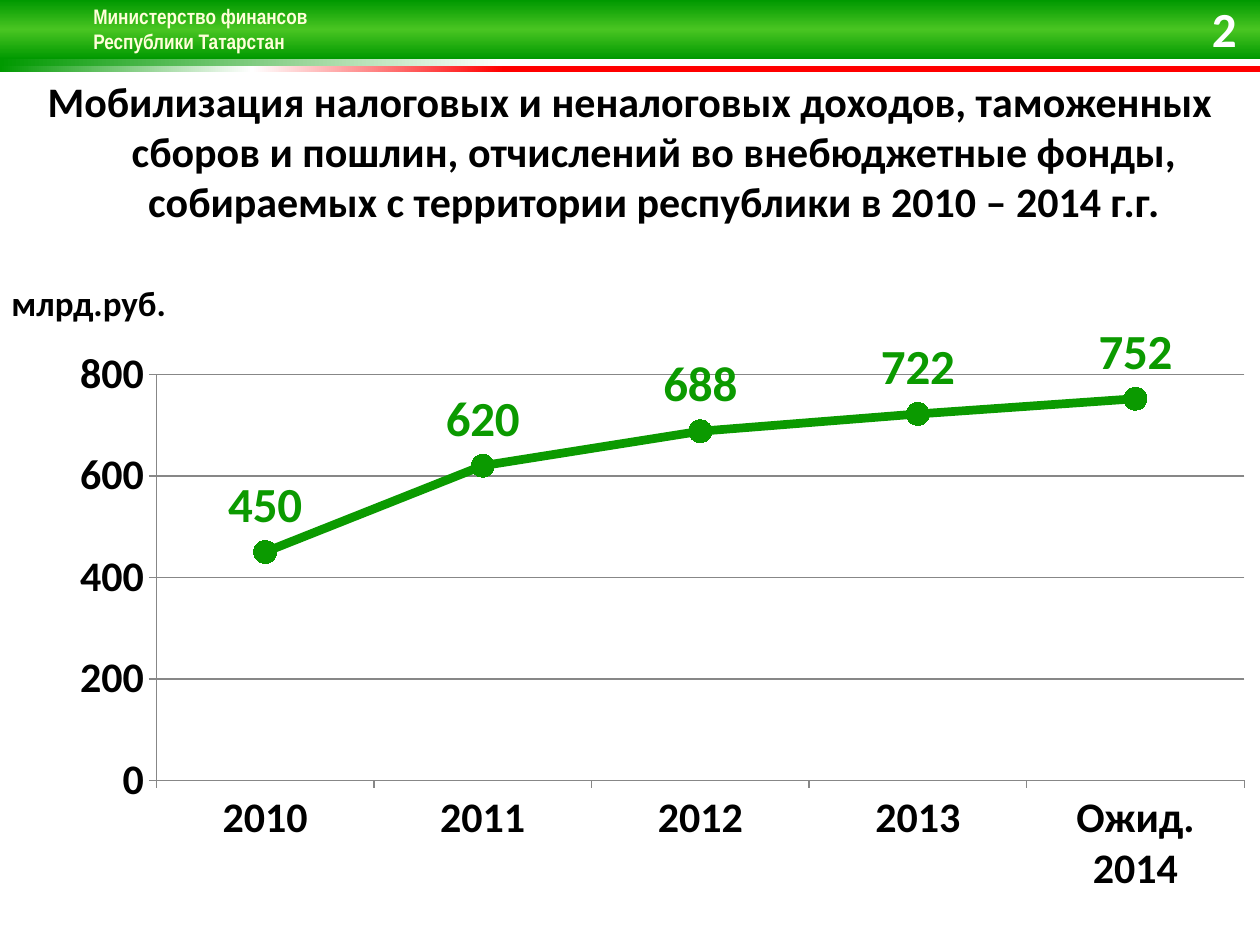
import lxml.etree
import pptx
import pptx.chart.data
import pptx.dml.color
import pptx.enum.chart
import pptx.enum.shapes
import pptx.enum.text
import pptx.oxml
import pptx.oxml.ns
import pptx.util

EMU_PER_PX = 914400 / 126
GREEN = "0B9A00"
GRAY = "878787"
BLACK = "000000"
ALIGN = pptx.enum.text.PP_ALIGN
NAMESPACES = pptx.oxml.ns.nsdecls("a", "c")


def px(length):
    """Turn whole pixels into EMU."""
    return pptx.util.Emu(round(length * EMU_PER_PX))


def color(value):
    """Turn a hex string into a colour."""
    return pptx.dml.color.RGBColor.from_string(value)


def set_font(font, size, value, name="Calibri", bold=True):
    """Set size, colour, typeface and weight."""
    font.size = pptx.util.Pt(size)
    font.bold = bold
    font.name = name
    font.fill.solid()
    font.fill.fore_color.rgb = color(value)


def add_band(page, top, height, stops, angle):
    """Add a full-width band with a linear gradient."""
    band = page.shapes.add_shape(
        pptx.enum.shapes.MSO_SHAPE.RECTANGLE, 0, px(top), px(1260), px(height))
    band.shadow.inherit = False
    band.line.fill.background()
    band.fill.gradient()
    gradient = band.fill._xPr.find(pptx.oxml.ns.qn("a:gradFill"))
    marks = "".join(
        f'<a:gs pos="{position * 1000}"><a:srgbClr val="{value}"/></a:gs>'
        for position, value in stops)
    gradient.getparent().replace(gradient, pptx.oxml.parse_xml(
        f'<a:gradFill {NAMESPACES} rotWithShape="1"><a:gsLst>{marks}</a:gsLst>'
        f'<a:lin ang="{angle * 60000}" scaled="0"/></a:gradFill>'))


def add_text(page, place, text, size, value, name="Calibri", align=ALIGN.LEFT,
             wrap=True, hanging=0, middle=False):
    """Add a text box with one paragraph and return the paragraph."""
    box = page.shapes.add_textbox(*map(px, place))
    frame = box.text_frame
    frame.word_wrap = wrap
    if middle:
        frame.vertical_anchor = pptx.enum.text.MSO_ANCHOR.MIDDLE
    para = frame.paragraphs[0]
    para.text = text
    para.alignment = align
    if hanging:
        properties = para._p.get_or_add_pPr()
        properties.set("marL", str(px(hanging)))
        properties.set("indent", str(-px(hanging)))
    set_font(para.font, size, value, name)
    return para


def add_text_shadow(para):
    """Give every run of a paragraph a soft dark shadow."""
    for span in para.runs:
        span._r.get_or_add_rPr().insert(0, pptx.oxml.parse_xml(
            f'<a:effectLst {NAMESPACES}><a:outerShdw blurRad="38100" dist="38100" '
            'dir="2700000"><a:srgbClr val="000000"/></a:outerShdw></a:effectLst>'))


def set_plot_area(chart, **fractions):
    """Fix the inner plot area as fractions of the chart."""
    plot_area = chart._chartSpace.chart.plotArea
    for layout in plot_area.findall(pptx.oxml.ns.qn("c:layout")):
        plot_area.remove(layout)
    sizes = "".join(f'<c:{key} val="{size}"/>' for key, size in fractions.items())
    plot_area.insert(0, pptx.oxml.parse_xml(
        f'<c:layout {NAMESPACES}><c:manualLayout><c:layoutTarget val="inner"/>'
        f'<c:xMode val="edge"/><c:yMode val="edge"/>{sizes}'
        '</c:manualLayout></c:layout>'))


def style_axis(axis):
    """Set the line, ticks and labels of an axis."""
    axis.major_tick_mark = pptx.enum.chart.XL_TICK_MARK.OUTSIDE
    axis.minor_tick_mark = pptx.enum.chart.XL_TICK_MARK.NONE
    axis.format.line.color.rgb = color(GRAY)
    axis.format.line.width = pptx.util.Pt(0.75)
    set_font(axis.tick_labels.font, 24, BLACK)


def style_series(series):
    """Set the line, markers and value labels of the series."""
    series.smooth = False
    series.format.line.color.rgb = color(GREEN)
    series.format.line.width = pptx.util.Pt(5)
    series.marker.style = pptx.enum.chart.XL_MARKER_STYLE.CIRCLE
    series.marker.size = 13
    series.marker.format.fill.solid()
    series.marker.format.fill.fore_color.rgb = color(GREEN)
    series.marker.format.line.color.rgb = color(GREEN)
    labels = series.data_labels
    labels.show_value = True
    labels.position = pptx.enum.chart.XL_LABEL_POSITION.ABOVE
    labels.number_format = "0"
    labels.number_format_is_linked = False
    set_font(labels.font, 28, GREEN)


def add_revenue_chart(page, place):
    """Add the line chart of revenue by year."""
    data = pptx.chart.data.CategoryChartData(number_format="0")
    data.categories = ["2010", "2011", "2012", "2013", "Ожид. 2014"]
    data.add_series("Series 1", [450, 620, 688, 722, 752])
    chart = page.shapes.add_chart(
        pptx.enum.chart.XL_CHART_TYPE.LINE_MARKERS, *map(px, place), data).chart
    chart.has_title = False
    chart.has_legend = False
    set_font(chart.font, 18, BLACK, bold=False)
    chart.plots[0].vary_by_categories = False
    set_plot_area(chart, x=0.115, y=0.12, w=0.885, h=0.655)
    style_axis(chart.category_axis)
    values = chart.value_axis
    style_axis(values)
    values.minimum_scale = 0
    values.maximum_scale = 800
    values.major_unit = 200
    values.has_major_gridlines = True
    values.major_gridlines.format.line.color.rgb = color(GRAY)
    values.major_gridlines.format.line.width = pptx.util.Pt(0.75)
    values.tick_labels.number_format = "0"
    values.tick_labels.number_format_is_linked = False
    style_series(chart.plots[0].series[0])


def main():
    """Build the slide and save it."""
    deck = pptx.Presentation()
    deck.slide_width, deck.slide_height = px(1260), px(945)
    page = deck.slides.add_slide(deck.slide_layouts[6])
    add_band(page, 59, 7, [(0, "FFFFFF"), (60, "FFFFFF"), (100, "009900")], 180)
    add_band(page, 66, 6, [(60, "FF0000"), (80, "FFFFFF"), (100, "009900")], 180)
    add_band(page, 0, 59, [(0, "009900"), (50, "49C522"), (100, "009900")], 90)
    ministry = add_text(
        page, (81, -3, 242, 89), "Министерство финансов\vРеспублики Татарстан",
        12, "FFFFD9", name="Arial Narrow")
    add_text_shadow(ministry)
    add_text(
        page, (0, 69, 1260, 136),
        "Мобилизация налоговых и неналоговых доходов, таможенных сборов и пошлин, "
        "отчислений во внебюджетные фонды, собираемых с территории республики "
        "в 2010 – 2014 г.г.",
        24, BLACK, align=ALIGN.CENTER, hanging=48)
    add_revenue_chart(page, (15, 300, 1230, 620))
    add_text(page, (1168, 6, 81, 43), "2", 28, "FFFFFF",
             align=ALIGN.RIGHT, hanging=48, middle=True)
    add_text(page, (-1, 275, 181, 55), "млрд.руб.", 20, BLACK, wrap=False)
    deck.save("out.pptx")


if __name__ == "__main__":
    main()
